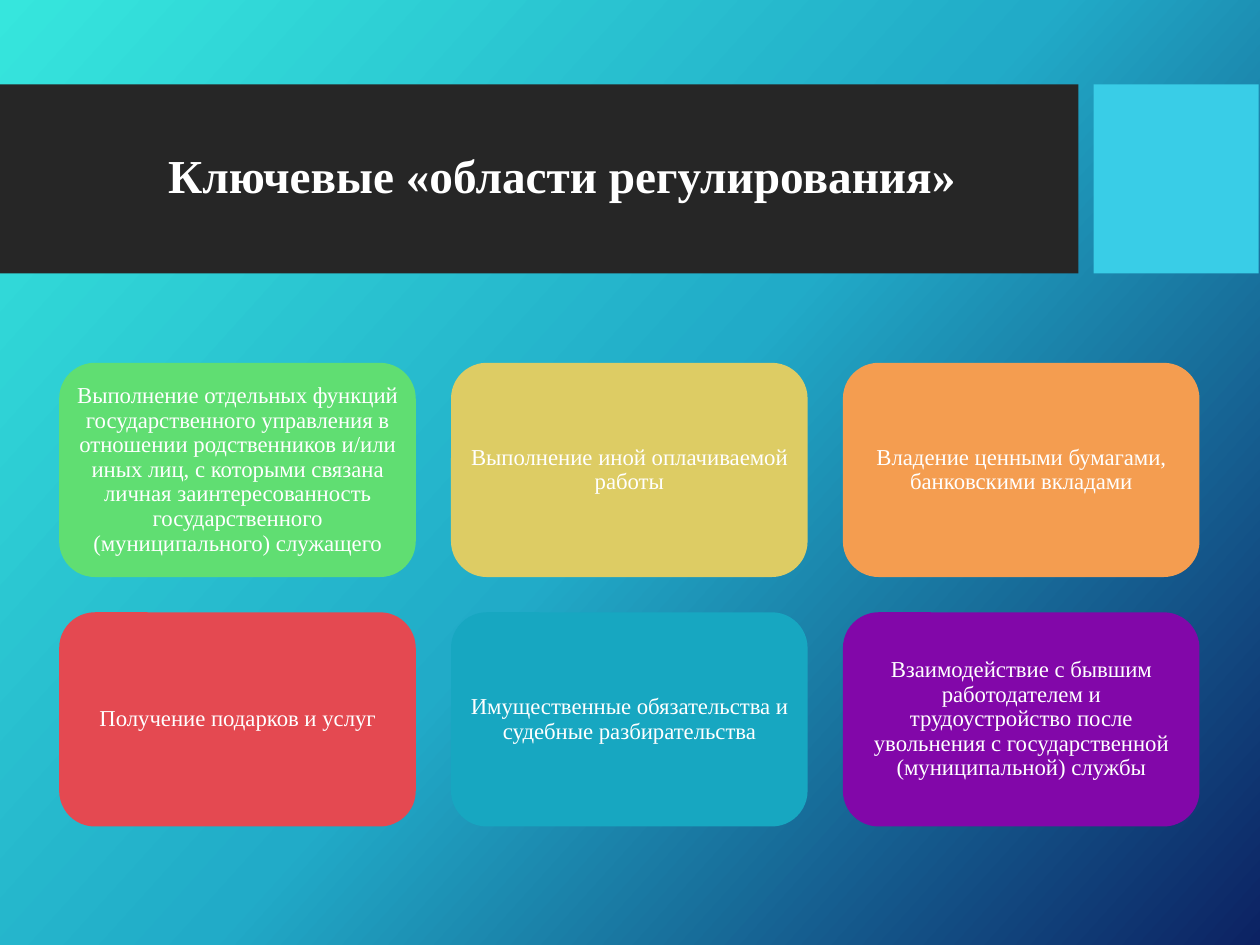
from copy import deepcopy

from pptx import Presentation
from pptx import util as u
from pptx.dml.color import RGBColor
from pptx.enum import shapes, text
from pptx.oxml.ns import qn

HUES = {
    "start": "36E6DD", "mid": "21ABC8", "end": "0C2263",
    "band": "262626", "tab": "39CDE7", "white": "FFFFFF",
    "green": "60DE72", "sand": "DDCC64", "orange": "F49D50",
    "red": "E44951", "teal": "17A7C1", "violet": "8207A9",
}
CARDS = [
    ("green", "Выполнение отдельных функций государственного управления в "
              "отношении родственников и/или иных лиц, с которыми связана "
              "личная заинтересованность государственного "
              "(муниципального) служащего"),
    ("sand", "Выполнение иной оплачиваемой работы"),
    ("orange", "Владение ценными бумагами, банковскими вкладами"),
    ("red", "Получение подарков и услуг"),
    ("teal", "Имущественные обязательства и судебные разбирательства"),
    ("violet", "Взаимодействие с бывшим работодателем и трудоустройство "
               "после увольнения с государственной (муниципальной) службы"),
]
COLS = 3


def rgb(hue):
    return RGBColor.from_string(HUES[hue])


class Board:
    font = "Times New Roman"

    def __init__(self, slide):
        self.slide = slide

    def backdrop(self, hues, angle):
        """Fill the background with evenly spaced stops, angle clockwise."""
        fill = self.slide.background.fill
        fill.gradient()
        fill.gradient_angle = 360 - angle
        stops = self.slide.element.find(".//" + qn("a:gsLst"))
        while len(stops) < len(hues):
            stops.append(deepcopy(stops[0]))
        for i, (stop, hue) in enumerate(zip(fill.gradient_stops, hues)):
            stop.position = i / (len(hues) - 1)
            stop.color.rgb = rgb(hue)

    def block(self, kind, box, hue):
        item = self.slide.shapes.add_shape(kind, *map(u.Inches, box))
        item.shadow.inherit = False
        item.fill.solid()
        item.fill.fore_color.rgb = rgb(hue)
        item.line.fill.background()
        return item

    def label(self, item, words, size, bold=False, inset=None):
        frame = item.text_frame
        look = {"word_wrap": True, "vertical_anchor": text.MSO_ANCHOR.MIDDLE}
        if inset is not None:
            for side in ("left", "top", "right", "bottom"):
                look["margin_" + side] = u.Inches(inset)
        for key, val in look.items():
            setattr(frame, key, val)
        para = frame.paragraphs[0]
        para.alignment = text.PP_ALIGN.CENTER
        para.line_spacing = 0.9
        run = para.add_run()
        run.text = words
        face = {"name": self.font, "size": u.Pt(size), "bold": bold}
        for key, val in face.items():
            setattr(run.font, key, val)
        run.font.color.rgb = rgb("white")

    def title(self, box, words):
        item = self.slide.shapes.add_textbox(*map(u.Inches, box))
        self.label(item, words, 27, bold=True)

    def card(self, box, hue, words):
        item = self.block(shapes.MSO_SHAPE.ROUNDED_RECTANGLE, box, hue)
        self.label(item, words, 13, inset=0.05)


def main():
    deck = Presentation()
    deck.slide_width, deck.slide_height = u.Inches(10), u.Inches(7.5)
    board = Board(deck.slides.add_slide(deck.slide_layouts[6]))
    board.backdrop(["start", "mid", "end"], 42)

    rect = shapes.MSO_SHAPE.RECTANGLE
    board.block(rect, (0, 0.67, 8.56, 1.5), "band")
    board.block(rect, (8.68, 0.67, 1.31, 1.5), "tab")

    left, top, wide, high, gap = 0.47, 2.88, 2.83, 1.7, 0.28
    for i, (hue, words) in enumerate(CARDS):
        row, col = divmod(i, COLS)
        spot = (left + col * (wide + gap), top + row * (high + gap))
        board.card((*spot, wide, high), hue, words)

    board.title((0.56, 0.82, 7.89, 1.18), "Ключевые «области регулирования» ")
    deck.save("out.pptx")


if __name__ == "__main__":
    main()
